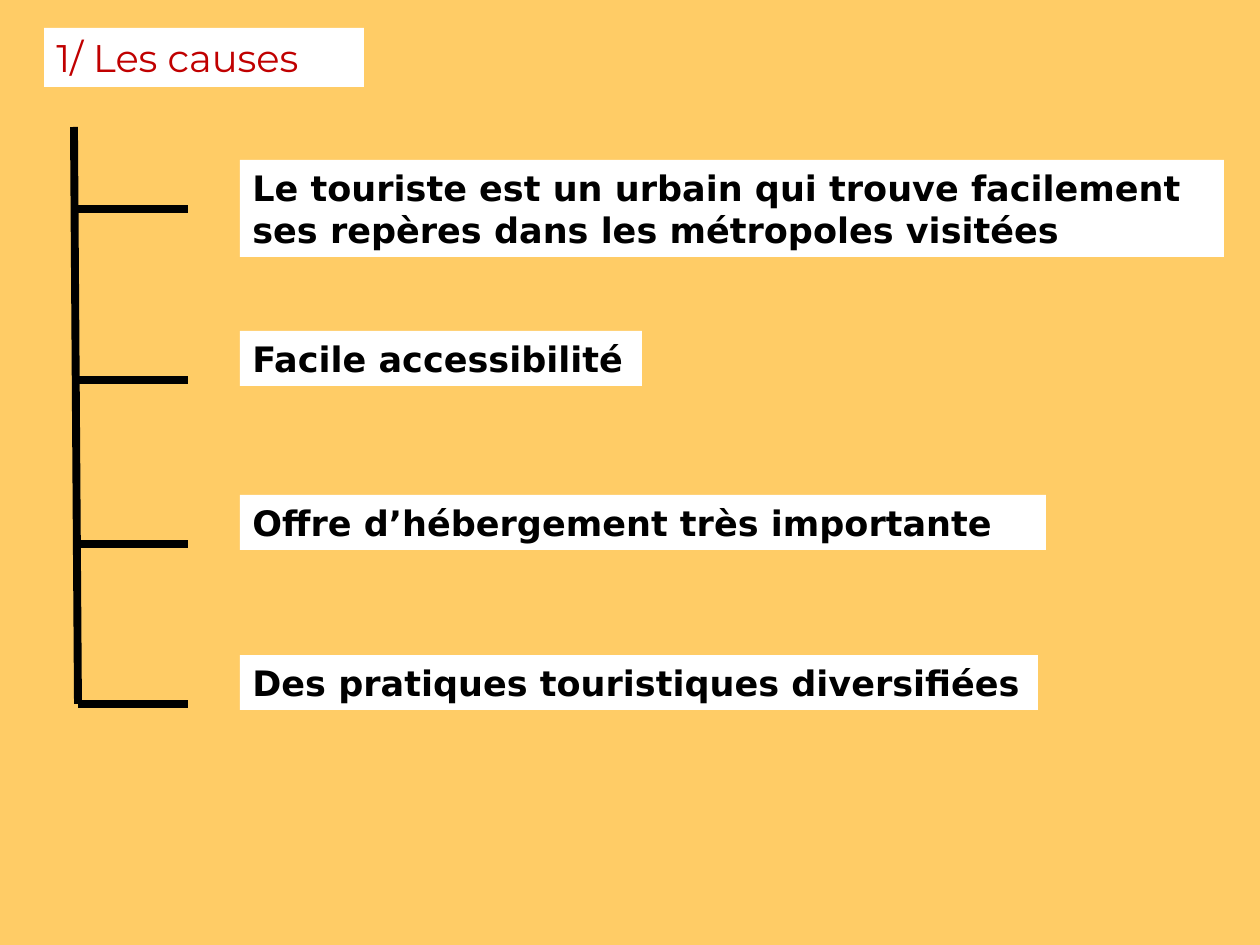
from pptx import Presentation
from pptx.dml.color import RGBColor
from pptx.enum.shapes import MSO_CONNECTOR, MSO_SHAPE
from pptx.enum.text import MSO_ANCHOR, MSO_AUTO_SIZE, PP_ALIGN
from pptx.oxml.ns import qn
from pptx.util import Pt

LINE, RECT = MSO_CONNECTOR.STRAIGHT, MSO_SHAPE.RECTANGLE
TOP, LEFT, GROW = MSO_ANCHOR.TOP, PP_ALIGN.LEFT, MSO_AUTO_SIZE.SHAPE_TO_FIT_TEXT

# Content: text, top, width, height
TITLE = ("1/ Les causes", 28, 320, 59)
CAUSES = [
    ("Le touriste est un urbain qui trouve facilement "
     "ses repères dans les métropoles visitées", 160, 984, 97),
    ("Facile accessibilité", 331, 402, 55),
    ("Offre d’hébergement très importante", 495, 806, 55),
    ("Des pratiques touristiques diversifiées", 655, 798, 55),
]

# Layout in px, 126 to the inch
SCALE = 914400 // 126
TITLE_X, CAUSE_X = 44, 240
TRUNK_X, TRUNK_TOP = 74, 127
STEM_X, STEM_END, STEM_DROP = 78, 188, 49

COLORS = {name: RGBColor.from_string(code) for name, code in {
    "back": "FFCC66", "box": "FFFFFF", "title": "C00000", "ink": "000000",
}.items()}
TITLE_FONT = {"name": "Montserrat", "size": Pt(22), "bold": False}
CAUSE_FONT = {"name": "DejaVu Sans", "size": Pt(20), "bold": True}


def px(*vals):
    return [val * SCALE for val in vals]


def add_box(slide, left, item, font, color):
    text, top, width, height = item
    box = slide.shapes.add_shape(RECT, *px(left, top, width, height))
    box.shadow.inherit = False
    box.fill.solid()
    box.fill.fore_color.rgb = COLORS["box"]
    box.line.fill.background()
    frame = box.text_frame
    for key, val in {"word_wrap": True, "vertical_anchor": TOP,
                     "auto_size": GROW}.items():
        setattr(frame, key, val)
    para = frame.paragraphs[0]
    para.alignment = LEFT
    run = para.add_run()
    run.text = text
    for key, val in font.items():
        setattr(run.font, key, val)
    run.font.color.rgb = COLORS[color]


def add_line(slide, *ends):
    line = slide.shapes.add_connector(LINE, *px(*ends))
    line.line.color.rgb = COLORS["ink"]
    line.line.width = Pt(4.5)
    props = line._element.spPr
    props.append(props.makeelement(qn("a:effectLst"), {}))


def main():
    deck = Presentation()
    deck.slide_width, deck.slide_height = px(1260, 945)
    slide = deck.slides.add_slide(deck.slide_layouts[6])
    fill = slide.background.fill
    fill.solid()
    fill.fore_color.rgb = COLORS["back"]

    add_box(slide, TITLE_X, TITLE, TITLE_FONT, "title")

    # Trunk, then one branch and box per cause
    add_line(slide, TRUNK_X, TRUNK_TOP, STEM_X, CAUSES[-1][1] + STEM_DROP)
    for cause in CAUSES:
        level = cause[1] + STEM_DROP
        add_line(slide, STEM_X, level, STEM_END, level)
        add_box(slide, CAUSE_X, cause, CAUSE_FONT, "ink")

    deck.save("out.pptx")


if __name__ == "__main__":
    main()
